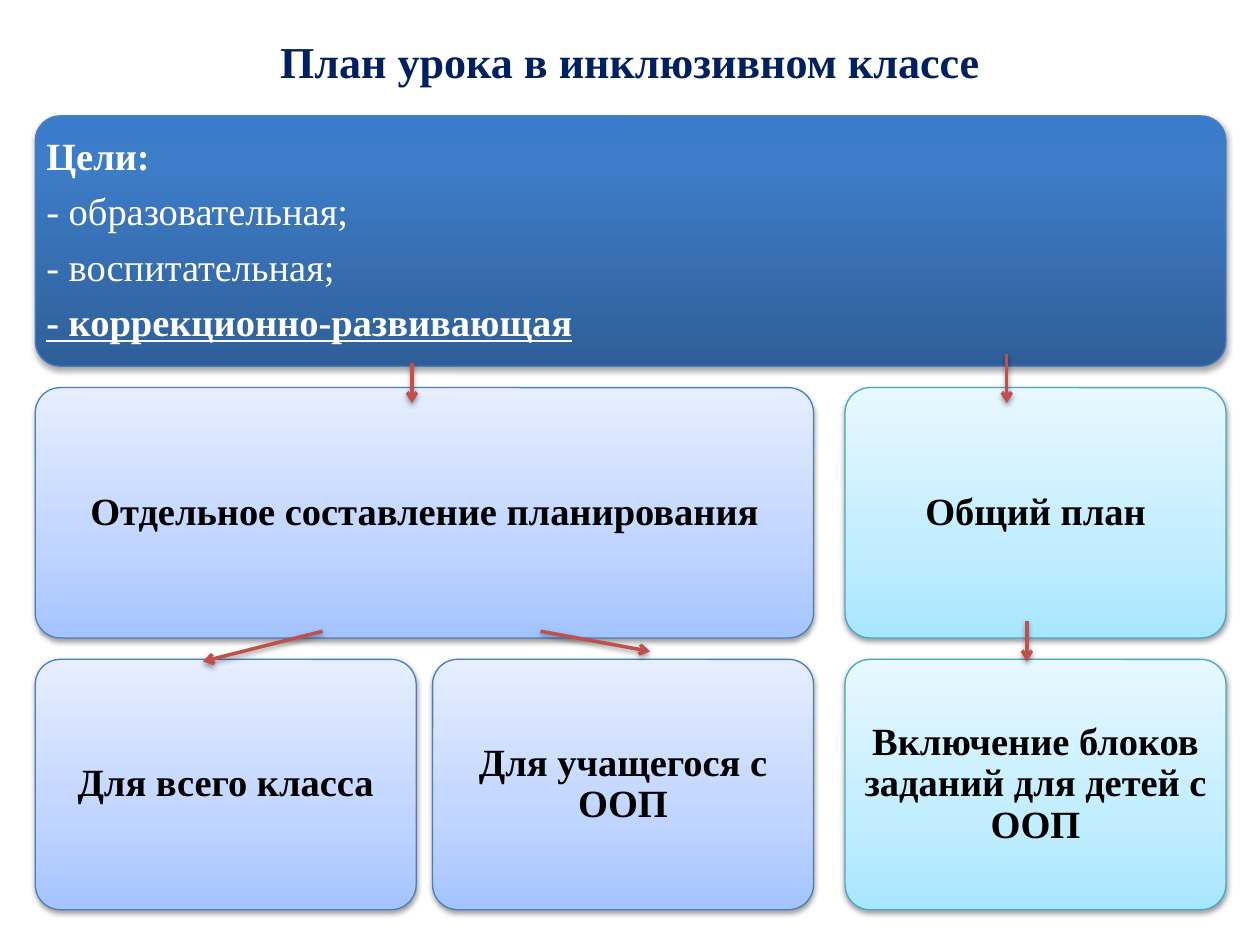
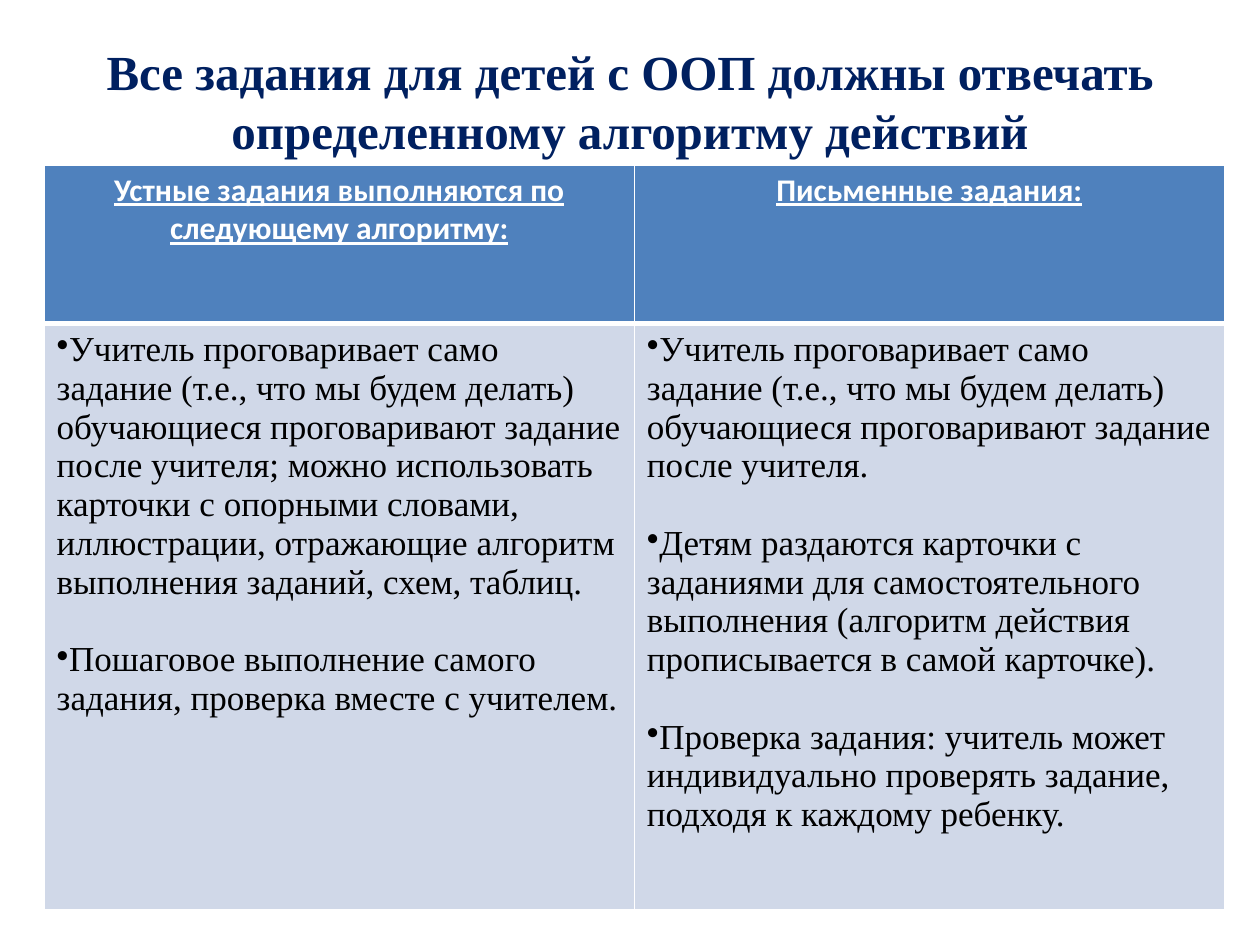
from copy import deepcopy
from dataclasses import dataclass
from typing import NamedTuple

from pptx import Presentation
from pptx.dml.color import RGBColor
from pptx.enum.shapes import MSO_CONNECTOR, MSO_SHAPE
from pptx.enum.text import MSO_ANCHOR, PP_ALIGN
from pptx.oxml import parse_xml
from pptx.oxml.ns import nsdecls, qn
from pptx.util import Inches, Pt


class Box(NamedTuple):
    """A rectangle in inches."""

    left: float
    top: float
    width: float
    height: float

    def lengths(self):
        """Return the four measures as slide lengths."""
        return [Inches(value) for value in self]


class CardStyle(NamedTuple):
    """Gradient stops from bottom to top, outline, text colour and shadow."""

    stops: tuple
    outline: str
    text: str
    shadow_alpha: int = 38
    shadow_distance: float = 1.6


@dataclass(frozen=True)
class Theme:
    """Colours, fonts and type sizes shared by the slides."""

    serif: str = "Times New Roman"
    sans: str = "Calibri"
    navy: str = "002060"
    white: str = "FFFFFF"
    black: str = "000000"
    arrow: str = "C0504D"
    header_fill: str = "4F81BD"
    body_fill: str = "D0D8E8"
    plan_title: float = 25.2
    rules_title: float = 28
    card_size: float = 22
    header_size: float = 18
    body_size: float = 20
    goals: CardStyle = CardStyle(
        ((0, "2F5F99"), (0.8, "3D7CC7"), (1, "3A7CCB")), "4B7EBC", "FFFFFF", 35, 1.8)
    separate: CardStyle = CardStyle(
        ((0, "A4C4FF"), (0.35, "BFD4FF"), (1, "E6EEFF")), "4B7EBC", "000000")
    common: CardStyle = CardStyle(
        ((0, "A7E6FF"), (0.35, "C1EDFF"), (1, "E7F8FF")), "46AAC5", "000000")


THEME = Theme()

GOALS = [
    ("Цели:", {"bold": True}),
    ("- образовательная;", {}),
    ("- воспитательная;", {}),
    ("- коррекционно-развивающая", {"bold": True, "underline": True}),
]
HEADERS = ["Устные задания выполняются по следующему алгоритму:", "Письменные задания:"]
STEPS = [
    [
        "Учитель проговаривает само задание (т.е., что мы будем делать) обучающиеся "
        "проговаривают задание после учителя; можно использовать карточки с опорными "
        "словами, иллюстрации, отражающие алгоритм выполнения заданий, схем, таблиц.",
        "Пошаговое выполнение самого задания, проверка вместе с учителем.",
    ],
    [
        "Учитель проговаривает само задание (т.е., что мы будем делать) обучающиеся "
        "проговаривают задание после учителя.",
        "Детям раздаются карточки с заданиями для самостоятельного выполнения "
        "(алгоритм действия прописывается в самой карточке).",
        "Проверка задания: учитель может индивидуально проверять задание, подходя к "
        "каждому ребенку.",
    ],
]


def rgb(colour):
    """Turn a hex string into a colour."""
    return RGBColor.from_string(colour)


def write(frame, text, *, size, colour, font=THEME.serif, bold=False, underline=False,
          align=PP_ALIGN.LEFT, spacing=None, after=0, bullet=False):
    """Write one formatted paragraph, reusing the first one while it is empty."""
    para = frame.paragraphs[0] if not frame.text else frame.add_paragraph()
    para.alignment = align
    para.space_after = Pt(after)
    if spacing:
        para.line_spacing = spacing
    if bullet:
        properties = para._p.get_or_add_pPr()
        properties.set("marL", "0")
        properties.set("indent", "0")
        properties.append(parse_xml(f'<a:buChar {nsdecls("a")} char="•"/>'))
    span = para.add_run()
    span.text = text
    span.font.name = font
    span.font.size = Pt(size)
    span.font.bold = bold
    span.font.underline = underline
    span.font.color.rgb = rgb(colour)


def add_shadow(shape, alpha=38, distance=1.6):
    """Give a shape or connector a soft shadow straight below it."""
    shape._element.spPr.append(parse_xml(
        f'<a:effectLst {nsdecls("a")}><a:outerShdw blurRad="{Pt(3.1)}" '
        f'dist="{Pt(distance)}" dir="5400000" rotWithShape="0"><a:srgbClr val="000000">'
        f'<a:alpha val="{alpha * 1000}"/></a:srgbClr></a:outerShdw></a:effectLst>'))


def add_title(page, box, text, size):
    """Place the centred slide title."""
    frame = page.shapes.add_textbox(*box.lengths()).text_frame
    frame.word_wrap = True
    frame.vertical_anchor = MSO_ANCHOR.MIDDLE
    write(frame, text, size=size, colour=THEME.navy, bold=True, align=PP_ALIGN.CENTER)


def add_card(page, box, style, lines, align=PP_ALIGN.CENTER):
    """Place a rounded gradient card with its lines of text."""
    card = page.shapes.add_shape(MSO_SHAPE.ROUNDED_RECTANGLE, *box.lengths())
    card.adjustments[0] = 0.1
    card.fill.gradient()
    card.fill.gradient_angle = 90
    stop_list = card._element.spPr.find(".//" + qn("a:gsLst"))
    stop_list.append(deepcopy(stop_list[0]))
    for stop, (position, colour) in zip(card.fill.gradient_stops, style.stops):
        stop.position = position
        stop.color.rgb = rgb(colour)
    card.line.color.rgb = rgb(style.outline)
    card.line.width = Pt(0.75)
    add_shadow(card, style.shadow_alpha, style.shadow_distance)
    frame = card.text_frame
    frame.word_wrap = True
    frame.vertical_anchor = MSO_ANCHOR.MIDDLE
    frame.margin_left = frame.margin_right = Inches(0.03)
    frame.margin_top = frame.margin_bottom = Inches(0.03)
    for text, emphasis in lines:
        write(frame, text, size=THEME.card_size, colour=style.text, align=align,
              spacing=0.9, after=8, **emphasis)


def add_arrow(page, start, end):
    """Draw a red arrow between two points."""
    arrow = page.shapes.add_connector(
        MSO_CONNECTOR.STRAIGHT, *(Inches(value) for value in (*start, *end)))
    arrow.line.color.rgb = rgb(THEME.arrow)
    arrow.line.width = Pt(2)
    arrow.line._get_or_add_ln().append(
        parse_xml(f'<a:tailEnd {nsdecls("a")} type="arrow"/>'))
    add_shadow(arrow)


def add_plan_tree(page, box):
    """Lay out the tree of plan cards and the arrows between its levels."""
    row_gap, column_gap, branch_gap = 0.17, 0.13, 0.25
    height = (box.height - 2 * row_gap) / 3
    width = (box.width - column_gap - branch_gap) / 3
    wide = 2 * width + column_gap
    second = width + column_gap
    third = wide + branch_gap
    add_card(page, Box(box.left, box.top, box.width, height), THEME.goals, GOALS,
             PP_ALIGN.LEFT)
    cards = [
        (0, 1, wide, THEME.separate, "Отдельное составление планирования"),
        (0, 2, width, THEME.separate, "Для всего класса"),
        (second, 2, width, THEME.separate, "Для учащегося с ООП"),
        (third, 1, width, THEME.common, "Общий план"),
        (third, 2, width, THEME.common, "Включение блоков заданий для детей с ООП"),
    ]
    for left, row, card_width, style, text in cards:
        top = box.top + row * (height + row_gap)
        add_card(page, Box(box.left + left, top, card_width, height), style,
                 [(text, {"bold": True})])
    arrows = [
        (2.99, 1.96, 2.99, 2.28),
        (2.28, 4.09, 1.33, 4.33),
        (4.01, 4.09, 4.88, 4.25),
        (7.71, 1.89, 7.71, 2.28),
        (7.87, 4.01, 7.87, 4.33),
    ]
    for x1, y1, x2, y2 in arrows:
        add_arrow(page, (box.left + x1, box.top + y1), (box.left + x2, box.top + y2))


def style_cell(cell, fill, top, bottom):
    """Fill a table cell and draw its white borders."""
    cell.fill.solid()
    cell.fill.fore_color.rgb = rgb(fill)
    properties = cell._tc.get_or_add_tcPr()
    for index, (side, width) in enumerate(zip("LRTB", (1, 1, top, bottom))):
        properties.insert(index, parse_xml(
            f'<a:ln{side} {nsdecls("a")} w="{Pt(width)}"><a:solidFill>'
            f'<a:srgbClr val="{THEME.white}"/></a:solidFill></a:ln{side}>'))


def add_task_table(page, box):
    """Place the table of spoken and written task steps."""
    header_height = 1.26
    table = page.shapes.add_table(2, 2, *box.lengths()).table
    table.first_row = table.horz_banding = False
    table.rows[0].height = Inches(header_height)
    table.rows[1].height = Inches(box.height - header_height)
    for column, (header, steps) in enumerate(zip(HEADERS, STEPS)):
        top_cell, body_cell = table.cell(0, column), table.cell(1, column)
        style_cell(top_cell, THEME.header_fill, 1, 3)
        style_cell(body_cell, THEME.body_fill, 3, 1)
        write(top_cell.text_frame, header, size=THEME.header_size, colour=THEME.white,
              font=THEME.sans, bold=True, underline=True, align=PP_ALIGN.CENTER)
        for step in steps:
            write(body_cell.text_frame, step, size=THEME.body_size, colour=THEME.black,
                  after=0 if step == steps[-1] else 22, bullet=True)


def build_plan_slide(page):
    """Build the lesson plan slide."""
    add_title(page, Box(0.5, 0.21, 9, 0.55), "План урока в инклюзивном классе",
              THEME.plan_title)
    add_plan_tree(page, Box(0.28, 0.92, 9.45, 6.3))


def build_rules_slide(page):
    """Build the task algorithm slide."""
    add_title(page, Box(0.5, 0.37, 9, 0.86),
              "Все задания для детей с ООП должны отвечать определенному алгоритму действий",
              THEME.rules_title)
    add_task_table(page, Box(0.35, 1.31, 9.37, 5.91))


def main():
    """Build and save the deck."""
    deck = Presentation()
    deck.slide_width, deck.slide_height = Inches(10), Inches(7.5)
    for build in (build_plan_slide, build_rules_slide):
        build(deck.slides.add_slide(deck.slide_layouts[6]))
    deck.save("out.pptx")


if __name__ == "__main__":
    main()
